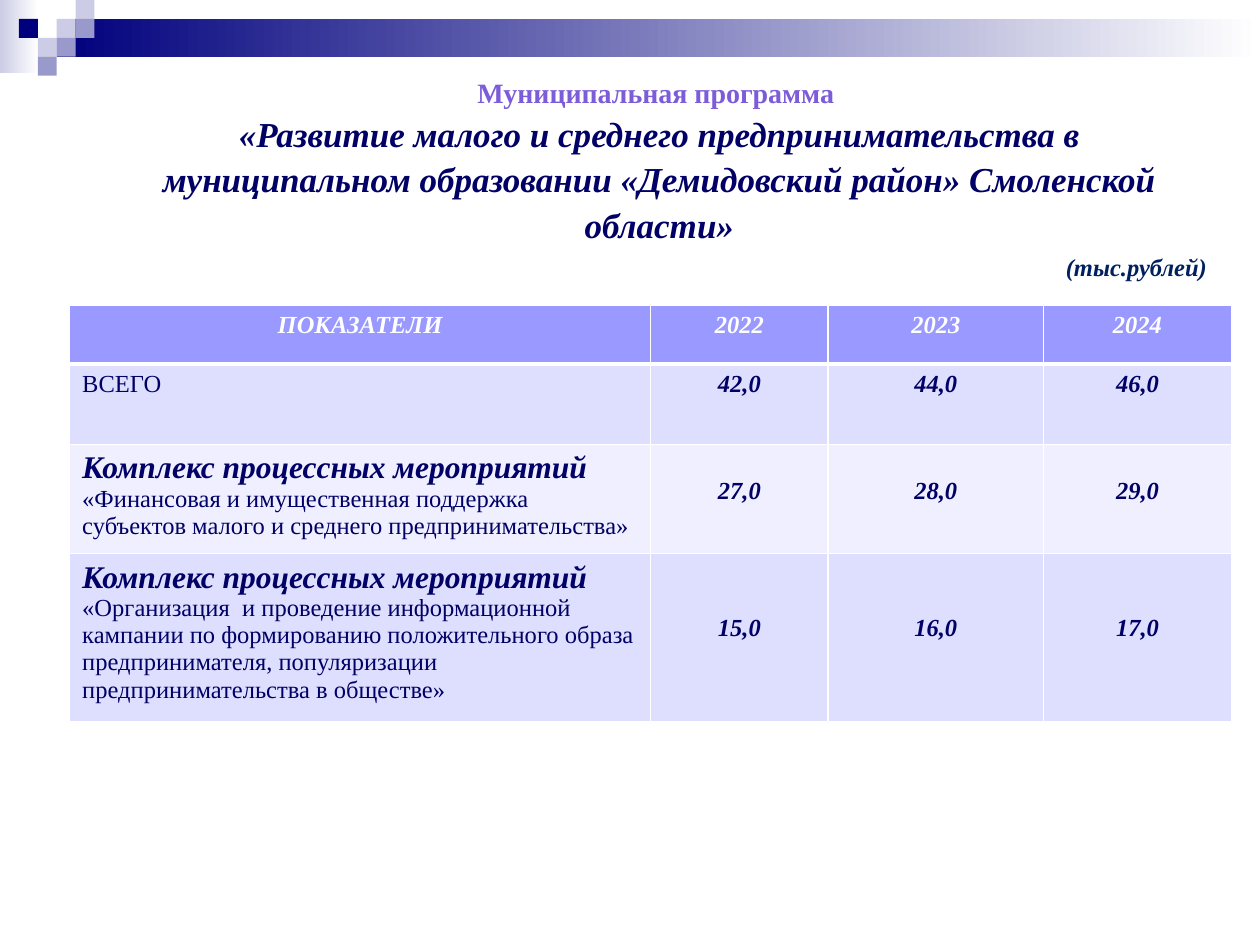
from dataclasses import dataclass

from lxml import etree
from pptx import Presentation
from pptx.dml.color import RGBColor
from pptx.enum import shapes, text
from pptx.oxml import ns
from pptx.util import Pt

NAVY = RGBColor(0x00, 0x00, 0x7D)
INK = RGBColor(0x00, 0x00, 0x66)
DEEP = RGBColor(0x00, 0x20, 0x60)
VIOLET = RGBColor(0x7D, 0x5C, 0xDA)
HEAD = RGBColor(0x99, 0x99, 0xFF)
BAND = RGBColor(0xDE, 0xDE, 0xFF)
PALE = RGBColor(0xEF, 0xEF, 0xFF)
MIST = RGBColor(0xCC, 0xCC, 0xE6)
STEEL = RGBColor(0x99, 0x99, 0xCC)
WHITE = RGBColor(0xFF, 0xFF, 0xFF)

FONT = "Times New Roman"
UNIT = 10.8  # side of one square in the corner pattern
PAD = 3.6
LINE = 15.5  # height of one 14 pt line


@dataclass
class Square:
    col: int
    row: int
    color: RGBColor


@dataclass
class Run:
    text: str
    size: float = 14
    color: RGBColor = INK
    bold: bool = True
    italic: bool = True


@dataclass
class Row:
    label: list[Run]
    values: list[str]
    height: float
    fill: RGBColor
    color: RGBColor = INK
    drop: int = 0  # lines by which the values sit lower


SQUARES = [
    Square(3, 1, MIST), Square(4, 0, MIST), Square(4, 1, STEEL),
    Square(2, 2, MIST), Square(1, 1, NAVY), Square(3, 2, STEEL),
    Square(2, 3, STEEL),
]


def plain(words: str) -> Run:
    return Run(words, bold=False, italic=False)


def complex_label(words: str) -> list[Run]:
    return [Run("Комплекс процессных мероприятий ", 18), plain(words)]


COLS = [332, 101.5, 123, 107.5]
ROWS = [
    Row([Run("ПОКАЗАТЕЛИ", color=WHITE)], ["2022", "2023", "2024"],
        33.5, HEAD, WHITE),
    Row([plain("ВСЕГО")], ["42,0", "44,0", "46,0"], 46, BAND),
    Row(complex_label("«Финансовая и имущественная поддержка субъектов "
                      "малого и среднего предпринимательства»"),
        ["27,0", "28,0", "29,0"], 62.5, PALE, drop=1),
    Row(complex_label("«Организация  и проведение информационной кампании "
                      "по формированию положительного образа "
                      "предпринимателя, популяризации "
                      "предпринимательства в обществе»"),
        ["15,0", "16,0", "17,0"], 96, BAND, drop=2),
]


def add_runs(para, runs: list[Run], align=None) -> None:
    para.alignment = align
    for item in runs:
        run = para.add_run()
        run.text = item.text
        font = run.font
        font.name, font.size = FONT, Pt(item.size)
        font.bold, font.italic = item.bold, item.italic
        font.color.rgb = item.color


def add_rect(slide, left: float, top: float, width: float, height: float,
             color: RGBColor, fade: bool = False) -> None:
    """Draw a borderless rectangle, solid or fading to white on the right."""
    rect = slide.shapes.add_shape(shapes.MSO_SHAPE.RECTANGLE, Pt(left),
                                  Pt(top), Pt(width), Pt(height))
    rect.shadow.inherit = False
    rect.line.fill.background()
    if fade:
        rect.fill.gradient()
        rect.fill.gradient_angle = 0
        for stop, shade in zip(rect.fill.gradient_stops, (color, WHITE)):
            stop.color.rgb = shade
    else:
        rect.fill.solid()
        rect.fill.fore_color.rgb = color


def add_edges(cell, above: float, below: float) -> None:
    """Give a cell white borders, 1 pt wide at the sides."""
    props = cell._tc.get_or_add_tcPr()
    widths = {"lnL": 1, "lnR": 1, "lnT": above, "lnB": below}
    for spot, (tag, width) in enumerate(widths.items()):
        edge = etree.Element(ns.qn(f"a:{tag}"), w=str(Pt(width)))
        fill = etree.SubElement(edge, ns.qn("a:solidFill"))
        etree.SubElement(fill, ns.qn("a:srgbClr"), val=str(WHITE))
        props.insert(spot, edge)


def add_title(slide) -> None:
    title = slide.shapes.title
    title.left, title.top = Pt(56), Pt(39.6)
    title.width, title.height = Pt(641.5), Pt(99.5)
    frame = title.text_frame
    frame.word_wrap = True
    frame.auto_size = text.MSO_AUTO_SIZE.NONE
    frame.vertical_anchor = text.MSO_ANCHOR.TOP
    center = text.PP_ALIGN.CENTER
    add_runs(frame.paragraphs[0], [Run("Муниципальная программа ", 16,
                                       VIOLET, italic=False)], center)
    name = frame.add_paragraph()
    name.line_spacing = 1.08
    add_runs(name, [Run("«Развитие малого и среднего предпринимательства в "
                        "муниципальном образовании «Демидовский район» "
                        "Смоленской области»", 20)], center)


def add_table(slide) -> None:
    frame = slide.shapes.add_table(
        len(ROWS), len(COLS), Pt(39.8), Pt(174.5), Pt(sum(COLS)),
        Pt(sum(row.height for row in ROWS)))
    table = frame.table
    for col, width in zip(table.columns, COLS):
        col.width = Pt(width)
    for i, row in enumerate(ROWS):
        table.rows[i].height = Pt(row.height)
        parts = [row.label] + [[Run(v, color=row.color)] for v in row.values]
        for j, runs in enumerate(parts):
            cell = table.cell(i, j)
            cell.fill.solid()
            cell.fill.fore_color.rgb = row.fill
            add_edges(cell, 3 if i == 1 else 1, 3 if i == 0 else 1)
            cell.margin_top = Pt(PAD + (row.drop * LINE if j else 0))
            left = i > 0 and j == 0
            add_runs(cell.text_frame.paragraphs[0], runs,
                     text.PP_ALIGN.LEFT if left else text.PP_ALIGN.CENTER)


def add_units(slide) -> None:
    box = slide.shapes.add_textbox(Pt(602), Pt(140.4), Pt(95.8), Pt(24.5))
    box.text_frame.word_wrap = False
    add_runs(box.text_frame.paragraphs[0], [Run("(тыс.рублей)", color=DEEP)])


def main() -> None:
    deck = Presentation()
    deck.slide_width, deck.slide_height = Pt(720), Pt(540)
    slide = deck.slides.add_slide(deck.slide_layouts[5])
    add_rect(slide, 0, 0, 22, 41.8, MIST, fade=True)
    add_rect(slide, 3 * UNIT, UNIT, 720 - 3 * UNIT, 2 * UNIT, NAVY, fade=True)
    for sq in SQUARES:
        add_rect(slide, sq.col * UNIT, sq.row * UNIT, UNIT, UNIT, sq.color)
    add_title(slide)
    add_table(slide)
    add_units(slide)
    deck.save("out.pptx")


if __name__ == "__main__":
    main()
